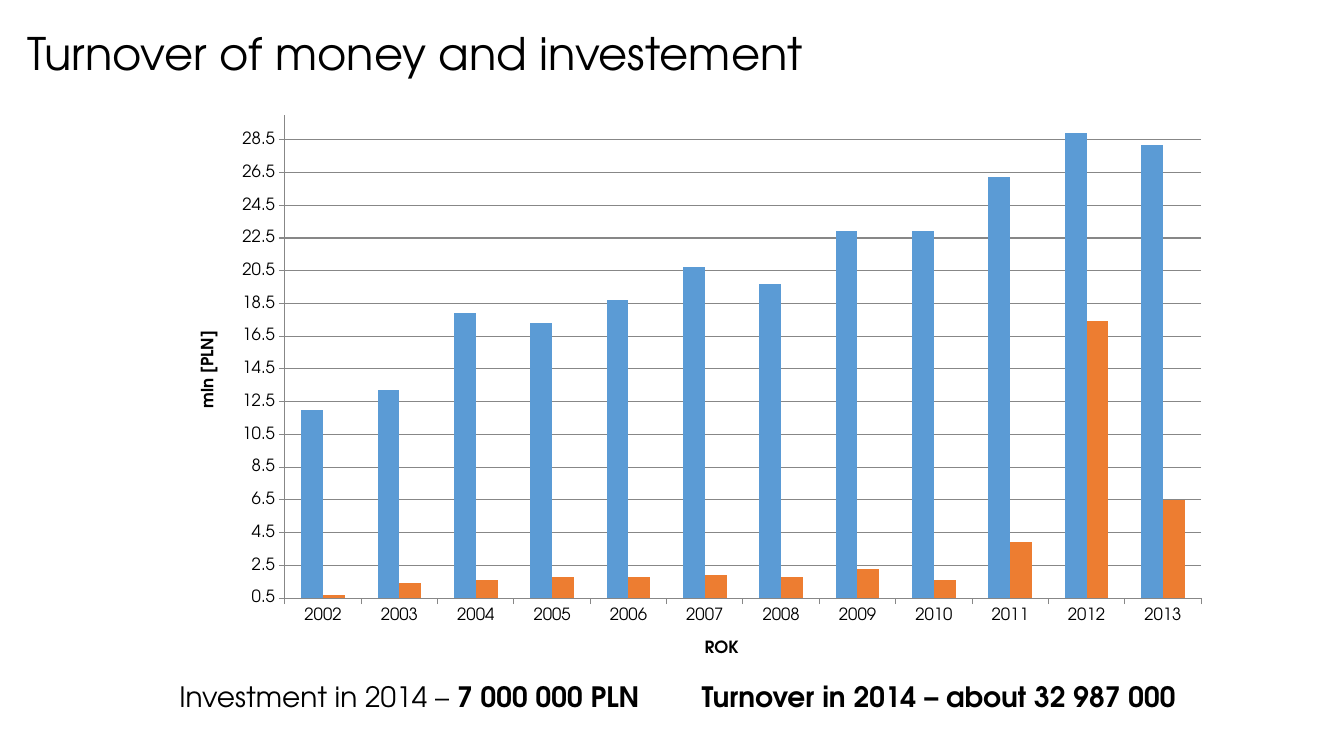
from lxml import etree
from pptx import Presentation
from pptx.chart.data import CategoryChartData
from pptx.dml.color import RGBColor
from pptx.enum.chart import XL_CHART_TYPE as ChartType, XL_TICK_MARK as TickMark
from pptx.oxml.ns import qn
from pptx.util import Inches, Pt

FONT = "TeX Gyre Adventor"
COLORS = {"text": "000000", "axis": "878787", "turnover": "5B9BD5", "investment": "ED7D31"}
YEARS = [str(year) for year in range(2002, 2014)]
TURNOVER = [12, 13.2, 17.9, 17.3, 18.7, 20.7, 19.7, 22.9, 22.9, 26.2, 28.9, 28.2]
INVESTMENT = [0.7, 1.4, 1.6, 1.8, 1.8, 1.9, 1.8, 2.3, 1.6, 3.9, 17.4, 6.5]


def rgb(name):
    return RGBColor.from_string(COLORS[name])


def style_font(font, size, bold=False):
    font.name = FONT
    font.size = Pt(size)
    font.bold = bold
    font.color.rgb = rgb("text")


def add_tab_stop(paragraph, position):
    tabs = etree.SubElement(paragraph._p.get_or_add_pPr(), qn("a:tabLst"))
    etree.SubElement(tabs, qn("a:tab"), pos=str(position), algn="l")


def add_text_line(slide, left, top, width, height, runs, size, tab=None):
    """Add one unwrapped line from (text, bold) runs."""
    box = slide.shapes.add_textbox(Inches(left), Inches(top), Inches(width), Inches(height))
    box.text_frame.word_wrap = False
    paragraph = box.text_frame.paragraphs[0]
    if tab:
        add_tab_stop(paragraph, Inches(tab))
    for text, bold in runs:
        run = paragraph.add_run()
        run.text = text
        style_font(run.font, size, bold)


def place_plot(chart, **fractions):
    """Fix the inner plot area as fractions of the chart."""
    plot_area = chart._chartSpace.chart.plotArea
    for old in plot_area.findall(qn("c:layout")):
        plot_area.remove(old)
    layout = etree.Element(qn("c:layout"))
    plot_area.insert(0, layout)
    manual = etree.SubElement(layout, qn("c:manualLayout"))
    settings = {"layoutTarget": "inner", "xMode": "edge", "yMode": "edge", **fractions}
    for tag, value in settings.items():
        etree.SubElement(manual, qn(f"c:{tag}"), val=str(value))


def style_axis(axis, title):
    axis.has_title = True
    axis.axis_title.text_frame.text = title
    style_font(axis.axis_title.text_frame.paragraphs[0].runs[0].font, 12, bold=True)
    style_font(axis.tick_labels.font, 12)
    axis.major_tick_mark = TickMark.OUTSIDE
    axis.minor_tick_mark = TickMark.NONE
    axis.format.line.color.rgb = rgb("axis")
    axis.format.line.width = Pt(0.75)


def add_turnover_chart(slide):
    data = CategoryChartData(number_format="0.0")
    data.categories = YEARS
    data.add_series("Series 1", TURNOVER)
    data.add_series("Series 2", INVESTMENT)
    chart = slide.shapes.add_chart(
        ChartType.COLUMN_CLUSTERED, Inches(1.76), Inches(1.03), Inches(10.35), Inches(5.69), data
    ).chart
    chart.has_legend = False
    chart.has_title = False
    style_font(chart.font, 12)
    place_plot(chart, x=0.103, y=0.02, w=0.878, h=0.842)

    columns = chart.plots[0]
    columns.gap_width = 150
    columns.overlap = 0
    columns.vary_by_categories = False
    for series, color in zip(columns.series, ("turnover", "investment")):
        series.format.fill.solid()
        series.format.fill.fore_color.rgb = rgb(color)

    style_axis(chart.category_axis, "ROK")
    amounts = chart.value_axis
    style_axis(amounts, "mln [PLN]")
    amounts.minimum_scale = 0.5
    amounts.maximum_scale = 30
    amounts.major_unit = 2
    amounts.tick_labels.number_format = "0.0"
    amounts.tick_labels.number_format_is_linked = False
    amounts.has_major_gridlines = True
    amounts.major_gridlines.format.line.color.rgb = rgb("axis")
    amounts.major_gridlines.format.line.width = Pt(0.75)


def main():
    prs = Presentation()
    prs.slide_width = Inches(13.33)
    prs.slide_height = Inches(7.5)
    slide = prs.slides.add_slide(prs.slide_layouts[6])
    add_turnover_chart(slide)
    add_text_line(slide, 0.17, 0.21, 8.04, 0.64, [("Turnover of money and investement", False)], 32)
    summary = [
        ("Investment in 2014 – ", False),
        ("7 000 000 PLN\tTurnover in 2014 – about 32 987 000", True),
    ]
    add_text_line(slide, 1.68, 6.69, 10.14, 0.44, summary, 20, tab=5.18)
    prs.save("out.pptx")


if __name__ == "__main__":
    main()
